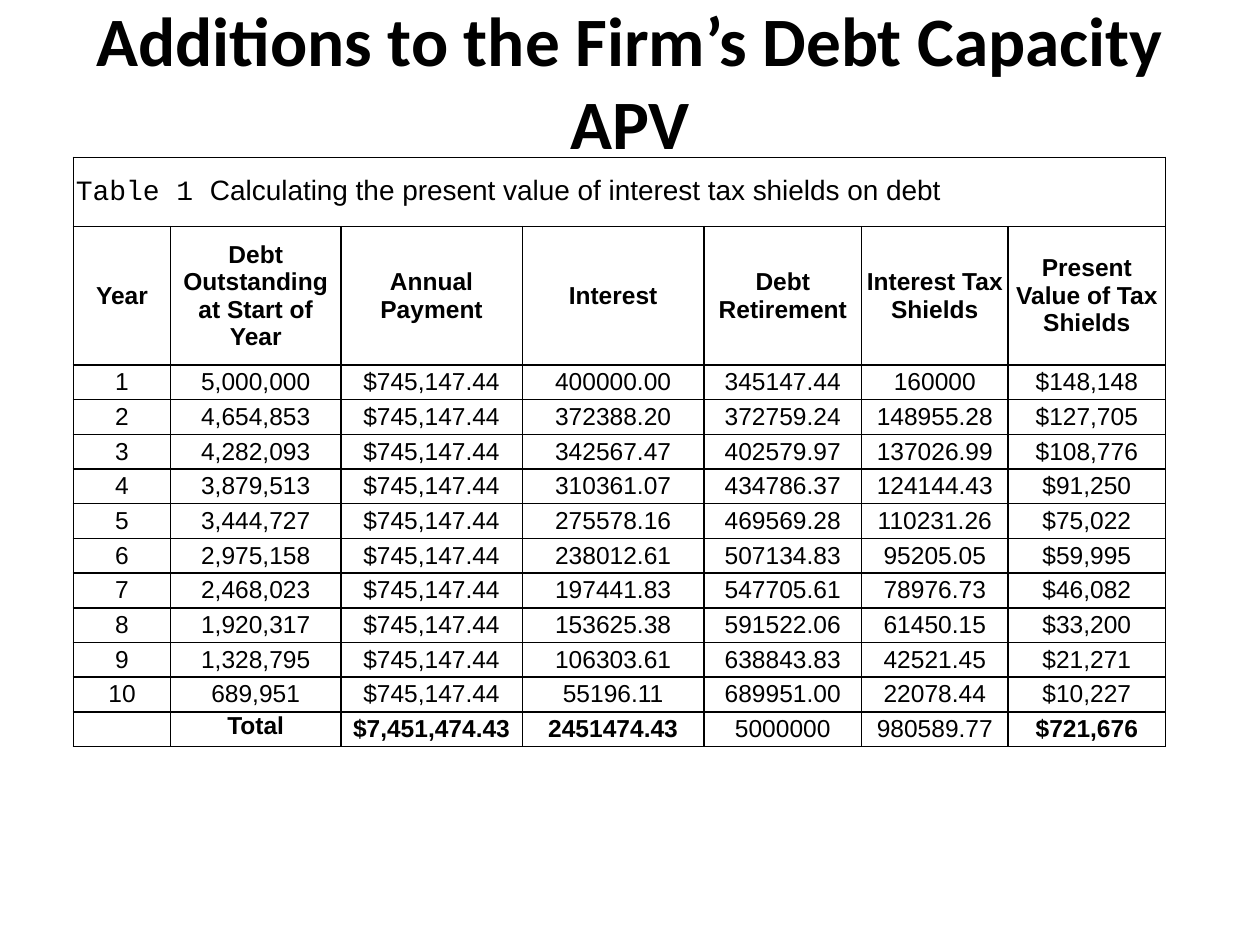
from lxml import etree
from pptx import Presentation
from pptx.dml.color import RGBColor
from pptx.enum import text
from pptx.oxml import ns
from pptx.util import Cm, Pt

COLORS = {"ink": "000000"}

CAPTION = [("Table 1 ", "Courier New"),
           ("Calculating the present value of interest tax shields on debt", "Arial")]
HEADINGS = ["Year", "Debt Outstanding at Start of Year", "Annual Payment", "Interest",
            "Debt Retirement", "Interest Tax Shields", "Present Value of Tax Shields"]
PAYMENT = "$745,147.44"
# Debt at start of year, interest, retirement, tax shield, present value
YEARS = [
    ("5,000,000", "400000.00", "345147.44", "160000", "$148,148"),
    ("4,654,853", "372388.20", "372759.24", "148955.28", "$127,705"),
    ("4,282,093", "342567.47", "402579.97", "137026.99", "$108,776"),
    ("3,879,513", "310361.07", "434786.37", "124144.43", "$91,250"),
    ("3,444,727", "275578.16", "469569.28", "110231.26", "$75,022"),
    ("2,975,158", "238012.61", "507134.83", "95205.05", "$59,995"),
    ("2,468,023", "197441.83", "547705.61", "78976.73", "$46,082"),
    ("1,920,317", "153625.38", "591522.06", "61450.15", "$33,200"),
    ("1,328,795", "106303.61", "638843.83", "42521.45", "$21,271"),
    ("689,951", "55196.11", "689951.00", "22078.44", "$10,227"),
]
TOTALS = ["", "Total", "$7,451,474.43", "2451474.43", "5000000", "980589.77", "$721,676"]
BOLD_TOTALS = {"Total", "$7,451,474.43", "2451474.43", "$721,676"}
COLUMN_WIDTHS = [1.96, 3.43, 3.66, 3.66, 3.18, 2.95, 3.18]
CAPTION_HEIGHT, HEADING_HEIGHT, ROW_HEIGHT = 1.4, 2.79, 0.7


class DebtPage:
    """Holds the style and the current slide."""

    def __init__(self, deck):
        self.page = deck.slides.add_slide(deck.slide_layouts[5])

    def style(self, span, font, size, bold=False):
        span.font.name = font
        span.font.size = Pt(size)
        span.font.bold = bold
        span.font.color.rgb = RGBColor.from_string(COLORS["ink"])

    def title(self, wording, left, top, width, height):
        box = self.page.shapes.title
        box.left, box.top, box.width, box.height = map(Cm, (left, top, width, height))
        frame = box.text_frame
        frame.text = wording
        frame.word_wrap = True
        frame.auto_size = text.MSO_AUTO_SIZE.NONE
        frame.vertical_anchor = text.MSO_ANCHOR.MIDDLE
        frame.margin_bottom = Cm(1.6)  # lifts the two lines above the table
        para = frame.paragraphs[0]
        para.alignment = text.PP_ALIGN.CENTER
        for span in para.runs:
            self.style(span, "Calibri", 39.6, True)

    def table(self, left, top, widths, heights):
        box = self.page.shapes.add_table(len(heights), len(widths), Cm(left), Cm(top),
                                         Cm(sum(widths)), Cm(sum(heights)))
        grid = box.table
        grid.first_row = grid.horz_banding = False
        for column, width in zip(grid.columns, widths):
            column.width = Cm(width)
        for row, height in zip(grid.rows, heights):
            row.height = Cm(height)
        for cell in grid.iter_cells():
            self.border(cell)
            cell.fill.background()
        return grid

    def border(self, cell):
        properties = cell._tc.get_or_add_tcPr()
        for side in ("a:lnL", "a:lnR", "a:lnT", "a:lnB"):
            line = etree.SubElement(properties, ns.qn(side), w=str(Pt(1)))
            fill = etree.SubElement(line, ns.qn("a:solidFill"))
            etree.SubElement(fill, ns.qn("a:srgbClr"), val=COLORS["ink"])

    def cell(self, cell, spans, size=14, bold=False, align=text.PP_ALIGN.CENTER,
             anchor=text.MSO_ANCHOR.MIDDLE):
        cell.margin_left = cell.margin_right = Cm(0.05)
        cell.margin_top = cell.margin_bottom = 0
        cell.vertical_anchor = anchor
        para = cell.text_frame.paragraphs[0]
        para.alignment = align
        for wording, font in spans:
            span = para.add_run()
            span.text = wording
            self.style(span, font, size, bold)
        if not spans:  # keeps an empty cell from stretching its row
            etree.SubElement(para._p, ns.qn("a:endParaRPr"), sz=str(size * 100))


def main():
    deck = Presentation()
    deck.slide_width, deck.slide_height = Cm(25.4), Cm(19.05)
    slide = DebtPage(deck)

    # Title
    slide.title("Additions to the Firm’s Debt Capacity\vAPV", 1.27, 0.76, 22.86, 3.18)

    # Table caption
    years = [[str(year), debt, PAYMENT, *rest]
             for year, (debt, *rest) in enumerate(YEARS, 1)]
    body = [HEADINGS, *years, TOTALS]
    heights = [CAPTION_HEIGHT, HEADING_HEIGHT] + [ROW_HEIGHT] * (len(body) - 1)
    grid = slide.table(1.48, 3.17, COLUMN_WIDTHS, heights)
    grid.cell(0, 0).merge(grid.cell(0, len(HEADINGS) - 1))
    slide.cell(grid.cell(0, 0), CAPTION, size=16, align=text.PP_ALIGN.JUSTIFY)

    # Headings, years and totals
    for i, row in enumerate(body, 1):
        for j, wording in enumerate(row):
            bold = row is HEADINGS or (row is TOTALS and wording in BOLD_TOTALS)
            anchor = text.MSO_ANCHOR.TOP if wording == "Total" else text.MSO_ANCHOR.MIDDLE
            slide.cell(grid.cell(i, j), [(wording, "Arial")] if wording else [],
                       bold=bold, anchor=anchor)

    deck.save("out.pptx")


if __name__ == "__main__":
    main()
